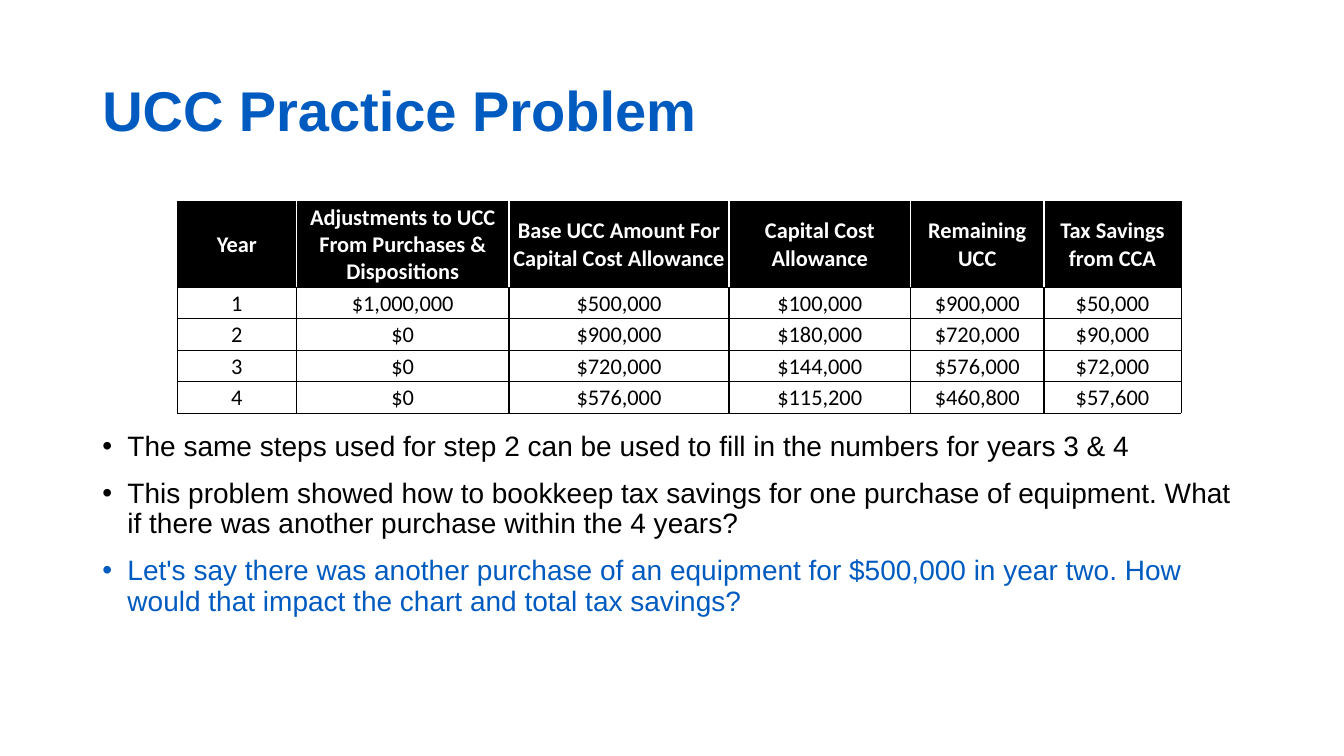
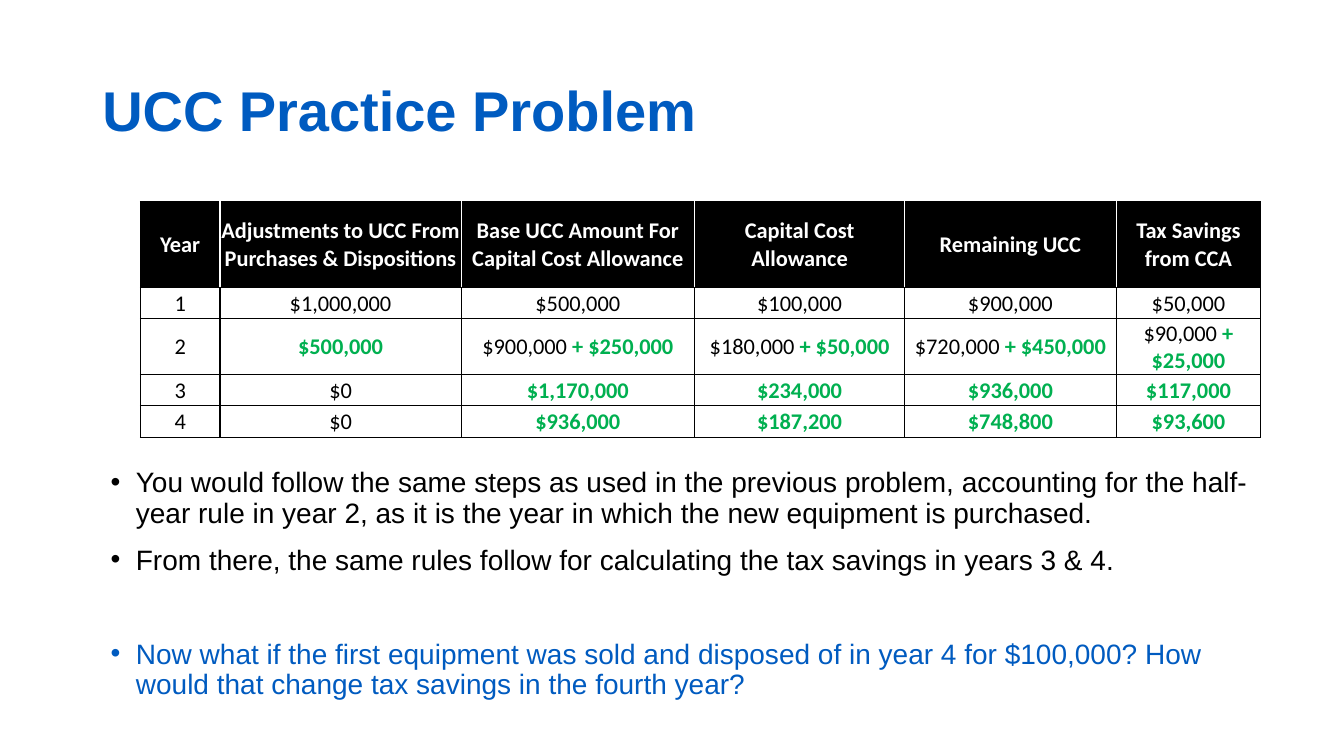
from lxml import etree
from pptx import Presentation
from pptx.dml.color import RGBColor
from pptx.enum.text import MSO_ANCHOR, PP_ALIGN
from pptx.oxml.ns import qn
from pptx.util import Inches, Pt

MIDDLE, TOP = MSO_ANCHOR.MIDDLE, MSO_ANCHOR.TOP
CENTER = PP_ALIGN.CENTER
COLORS = {"black": "000000", "white": "FFFFFF", "blue": "005BC0", "green": "00B050"}
UNIT = Inches(1 / 12)
COLS, ROWS = 160, 90
INDENT = Inches(0.25)
THIN, THICK = 0.5, 1

TITLE = {"name": "Arial", "size": Pt(40), "bold": True, "color": "blue"}
BODY = {"name": "Arial", "size": Pt(20), "color": "black"}
QUESTION = {**BODY, "color": "blue"}
CELL = {"name": "Calibri", "size": Pt(16), "bold": False, "color": "black"}
HEADER = {**CELL, "bold": True, "color": "white"}
CHANGED = {**CELL, "bold": True, "color": "green"}
INSETS = {"margin_left": Inches(0.01), "margin_right": Inches(0.01),
          "margin_top": Inches(0.01), "margin_bottom": 0}

TITLE_BOX = (11, 4.8, 138, 17.4)
HEADINGS = ["Year", "Adjustments to UCC From Purchases & Dispositions",
            "Base UCC Amount For Capital Cost Allowance",
            "Capital Cost Allowance", "Remaining UCC", "Tax Savings from CCA"]
FIRST_YEAR = ["1", "$1,000,000", "$500,000", "$100,000", "$900,000", "$50,000"]

SLIDES = [
    {
        "table_at": (21.1, 24),
        "widths": [14.2, 25.3, 26.2, 21.6, 15.9, 16.3],
        "heights": [10.2, 3.75, 3.75, 3.75, 3.75],
        "years": [
            ["2", "$0", "$900,000", "$180,000", "$720,000", "$90,000"],
            ["3", "$0", "$720,000", "$144,000", "$576,000", "$72,000"],
            ["4", "$0", "$576,000", "$115,200", "$460,800", "$57,600"],
        ],
        "body_box": (11, 50.9, 138, 37.2),
        "bullets": [
            "The same steps used for step 2 can be used to fill in the numbers for years 3 & 4",
            "This problem showed how to bookkeep tax savings for one purchase of equipment. "
            "What if there was another purchase within the 4 years?",
        ],
        "question": "Let's say there was another purchase of an equipment for $500,000 in year two. "
                    "How would that impact the chart and total tax savings?",
        "question_gap": 12,
    },
    {
        "table_at": (16.7, 24),
        "widths": [9.5, 28.7, 27.8, 25, 25.2, 17.2],
        "heights": [10.2, 3.75, 6.6, 3.75, 3.75],
        "years": [
            ["2", "|$500,000", "$900,000 |+ $250,000", "$180,000 |+ $50,000",
             "$720,000 |+ $450,000", "$90,000 |+$25,000"],
            ["3", "$0", "|$1,170,000", "|$234,000", "|$936,000", "|$117,000"],
            ["4", "$0", "|$936,000", "|$187,200", "|$748,800", "|$93,600"],
        ],
        "body_box": (12, 55.2, 138, 33.4),
        "bullets": [
            "You would follow the same steps as used in the previous problem, accounting for the "
            "half-year rule in year 2, as it is the year in which the new equipment is purchased.",
            "From there, the same rules follow for calculating the tax savings in years 3 & 4.",
        ],
        "question": "Now what if the first equipment was sold and disposed of in year 4 for $100,000? "
                    "How would that change tax savings in the fourth year?",
        "question_gap": 45.5,
    },
]


def grid(*lengths):
    """Turn grid lengths into slide lengths."""
    return [round(n * UNIT) for n in lengths]


def rgb(color):
    """Return the named colour."""
    return RGBColor.from_string(COLORS[color])


def add_run(p, text, style):
    """Add a run of text in the given style."""
    r = p.add_run()
    r.text = text
    for key, value in style.items():
        if key == "color":
            r.font.color.rgb = rgb(value)
        else:
            setattr(r.font, key, value)


def add_text_frame(slide, box, anchor):
    """Add a wrapping text box and return its frame."""
    tf = slide.shapes.add_textbox(*grid(*box)).text_frame
    tf.word_wrap = True
    tf.vertical_anchor = anchor
    return tf


def add_title(slide, box, text):
    """Write the slide title."""
    p = add_text_frame(slide, box, MIDDLE).paragraphs[0]
    p.line_spacing = 0.9
    add_run(p, text, TITLE)


def add_bullets(slide, box, items):
    """Write bullets given as text, style and space before."""
    tf = add_text_frame(slide, box, TOP)
    for i, (text, style, gap) in enumerate(items):
        p = tf.add_paragraph() if i else tf.paragraphs[0]
        p.line_spacing = 0.9
        p.space_before = Pt(gap)
        pPr = p._p.get_or_add_pPr()
        pPr.set("marL", str(INDENT))
        pPr.set("indent", str(-INDENT))
        etree.SubElement(pPr, qn("a:buFont"), typeface="Arial")
        etree.SubElement(pPr, qn("a:buChar"), char="•")
        add_run(p, text, style)


def set_border(cell, side, color, width):
    """Draw one border of a cell."""
    ln = etree.SubElement(cell._tc.get_or_add_tcPr(), qn(f"a:ln{side}"), w=str(Pt(width)))
    fill = etree.SubElement(ln, qn("a:solidFill"))
    etree.SubElement(fill, qn("a:srgbClr"), val=COLORS[color])


def set_borders(cell, row, col, last_row, last_col):
    """Draw thin outer and header lines, and thick inner ones."""
    inner = "white" if row == 0 else "black"
    for side, is_edge in (("L", col == 0), ("R", col == last_col)):
        set_border(cell, side, "black" if is_edge else inner, THIN if is_edge else THICK)
    for side, is_edge in (("T", row <= 1), ("B", row in (0, last_row))):
        set_border(cell, side, "black", THIN if is_edge else THICK)


def fill_cell(cell, text, is_header):
    """Fill a cell, with text after a bar marked as changed."""
    for key, value in INSETS.items():
        setattr(cell, key, value)
    cell.vertical_anchor = MIDDLE
    if is_header:
        cell.fill.solid()
        cell.fill.fore_color.rgb = rgb("black")
    else:
        cell.fill.background()
    p = cell.text_frame.paragraphs[0]
    p.alignment = CENTER
    plain, _, changed = text.partition("|")
    for part, style in ((plain, HEADER if is_header else CELL), (changed, CHANGED)):
        if part:
            add_run(p, part, style)


def add_ucc_table(slide, at, widths, heights, rows):
    """Draw the table of tax savings by year."""
    box = grid(*at, sum(widths), sum(heights))
    table = slide.shapes.add_table(len(rows), len(widths), *box).table
    table.first_row = table.horz_banding = False
    for column, width in zip(table.columns, grid(*widths)):
        column.width = width
    for row, height in zip(table.rows, grid(*heights)):
        row.height = height
    for i, values in enumerate(rows):
        for j, text in enumerate(values):
            cell = table.cell(i, j)
            set_borders(cell, i, j, len(rows) - 1, len(widths) - 1)
            fill_cell(cell, text, i == 0)


def add_problem_slide(prs, data):
    """Build a slide with title, table and bullets."""
    slide = prs.slides.add_slide(prs.slide_layouts[6])
    add_title(slide, TITLE_BOX, "UCC Practice Problem")
    items = [(text, BODY, 12) for text in data["bullets"]]
    items.append((data["question"], QUESTION, data["question_gap"]))
    add_bullets(slide, data["body_box"], items)
    add_ucc_table(slide, data["table_at"], data["widths"], data["heights"],
                  [HEADINGS, FIRST_YEAR, *data["years"]])


def main():
    """Build and save the presentation."""
    prs = Presentation()
    prs.slide_width, prs.slide_height = grid(COLS, ROWS)
    for data in SLIDES:
        add_problem_slide(prs, data)
    prs.save("out.pptx")


if __name__ == "__main__":
    main()
